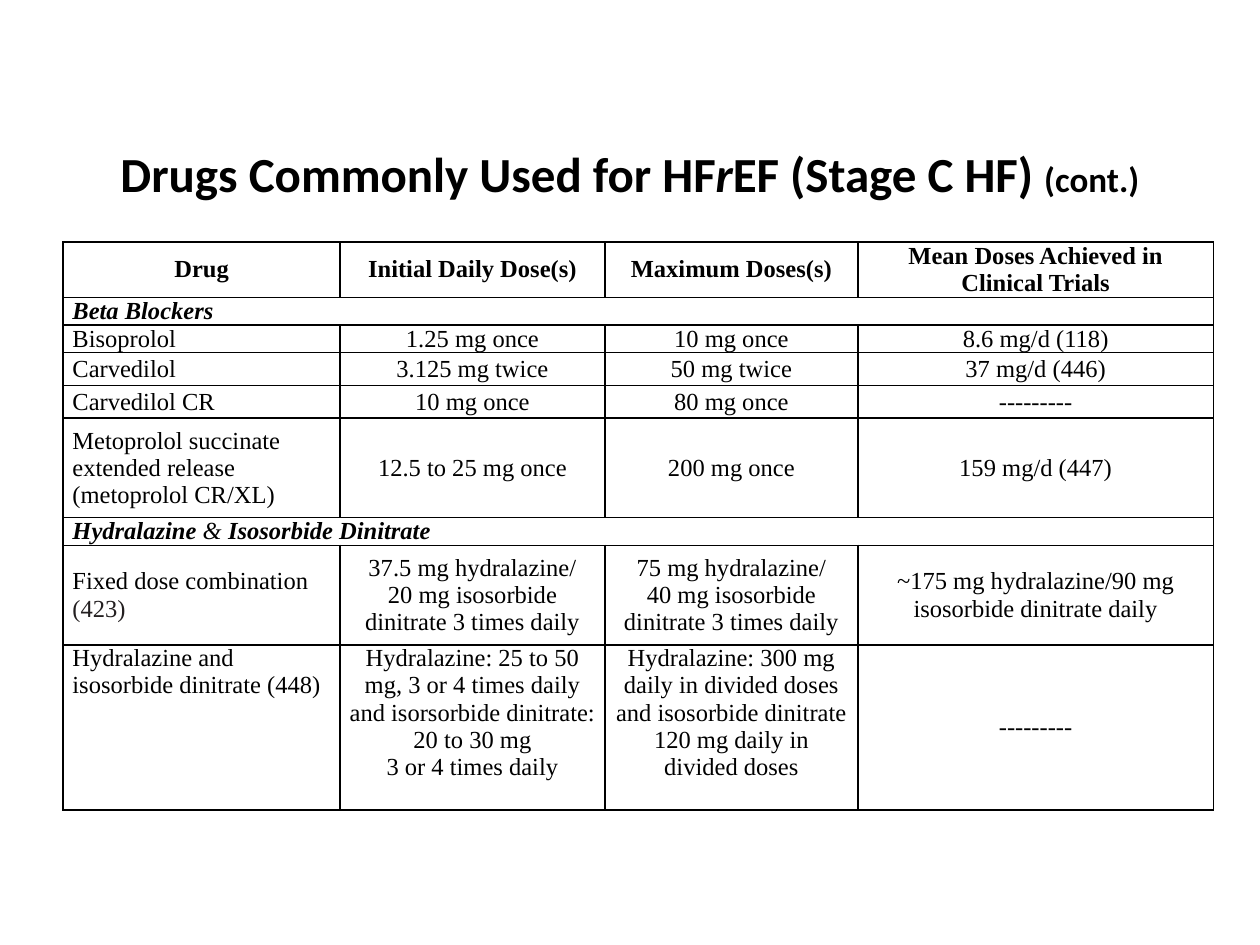
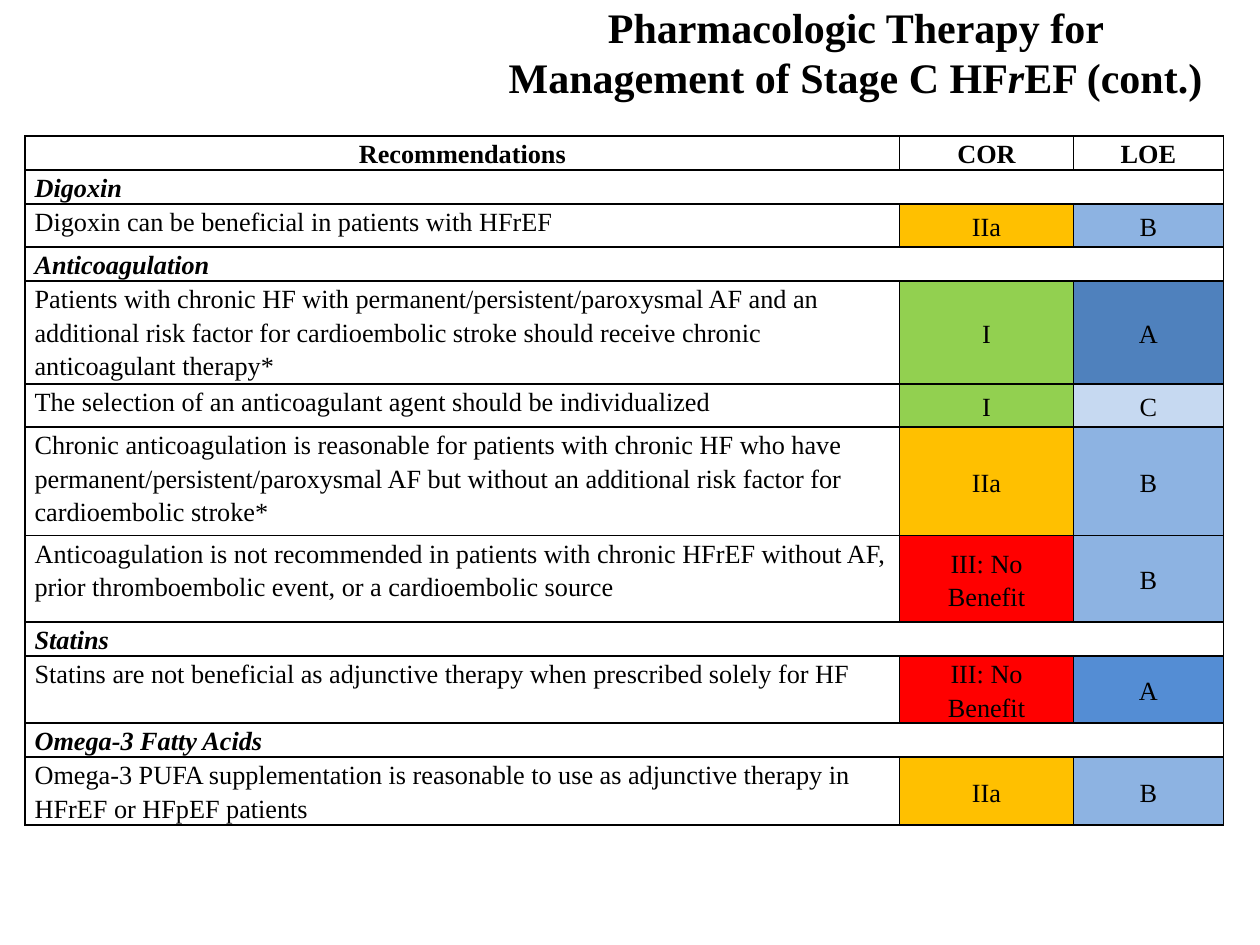
from lxml import etree
from pptx import Presentation
from pptx import util as u
from pptx.dml.color import RGBColor
from pptx.enum import text
from pptx.oxml.ns import qn

INK = "000000"
SERIF = "Times New Roman"
GOLD, GREEN, RED, SKY = "FFC000", "92D050", "FF0000", "8DB3E2"
LEFT, MID = text.PP_ALIGN.LEFT, text.PP_ALIGN.CENTER
TOP, CORE = text.MSO_ANCHOR.TOP, text.MSO_ANCHOR.MIDDLE


def hue(code):
    return RGBColor.from_string(code)


def write(frame, words, face, size, bold, slant, align, lead=1.0):
    odd = []
    for n, line in enumerate(words.split("\n")):
        para = frame.paragraphs[0] if n == 0 else frame.add_paragraph()
        para.alignment, para.line_spacing = align, lead
        for k, part in enumerate(line.split("_")):
            if not part:
                continue
            run = para.add_run()
            run.text = part
            font = run.font
            font.name, font.size = face, u.Pt(size)
            font.bold, font.italic = bold, slant
            font.color.rgb = hue(INK)
            if k % 2:
                odd.append(run)
    return odd


deck = Presentation()
deck.slide_width, deck.slide_height = u.Inches(10), u.Inches(7.5)

drugs = [
    ["Drug", "Initial Daily Dose(s)", "Maximum Doses(s)",
     "Mean Doses Achieved in Clinical Trials"],
    ["Beta Blockers"],
    ["Bisoprolol", "1.25 mg once", "10 mg once", "8.6 mg/d (118)"],
    ["Carvedilol", "3.125 mg twice", "50 mg twice", "37 mg/d (446)"],
    ["Carvedilol CR", "10 mg once", "80 mg once", "---------"],
    ["Metoprolol succinate extended release (metoprolol CR/XL)",
     "12.5 to 25 mg once", "200 mg once", "159 mg/d (447)"],
    ["Hydralazine_ & _Isosorbide Dinitrate"],
    ["Fixed dose combination _(423)_",
     "37.5 mg hydralazine/\n20 mg isosorbide dinitrate 3 times daily",
     "75 mg hydralazine/\n40 mg isosorbide dinitrate 3 times daily",
     "~175 mg hydralazine/90 mg isosorbide dinitrate daily"],
    ["Hydralazine and isosorbide dinitrate (448)",
     "Hydralazine: 25 to 50 mg, 3 or 4 times daily and isorsorbide dinitrate:\n"
     "20 to 30 mg\n3 or 4 times daily",
     "Hydralazine: 300 mg daily in divided doses and isosorbide dinitrate "
     "120 mg daily in divided doses", "---------"],
]
advice = [
    ["Recommendations", "COR", "LOE"],
    ["Digoxin"],
    ["Digoxin can be beneficial in patients with HFrEF", "IIa", "B"],
    ["Anticoagulation"],
    ["Patients with chronic HF with permanent/persistent/paroxysmal AF and an "
     "additional risk factor for cardioembolic stroke should receive chronic "
     "anticoagulant therapy*", "I", "A"],
    ["The selection of an anticoagulant agent should be individualized", "I", "C"],
    ["Chronic anticoagulation is reasonable for patients with chronic HF who have "
     "permanent/persistent/paroxysmal AF but without an additional risk factor for "
     "cardioembolic stroke*", "IIa", "B"],
    ["Anticoagulation is not recommended in patients with chronic HFrEF without AF, "
     "prior thromboembolic event, or a cardioembolic source", "III: No Benefit", "B"],
    ["Statins"],
    ["Statins are not beneficial as adjunctive therapy when prescribed solely for HF",
     "III: No Benefit", "A"],
    ["Omega-3 Fatty Acids"],
    ["Omega-3 PUFA supplementation is reasonable to use as adjunctive therapy in "
     "HFrEF or HFpEF patients", "IIa", "B"],
]
grades = {"IIa": GOLD, "I": GREEN, "III: No Benefit": RED,
          "A": "4F81BD", "B": SKY, "C": "C6D9F1"}

pages = [
    dict(title="Drugs Commonly Used for HF_r_EF (Stage C HF) _(cont.)_",
         face="Calibri", size=28, box=(0.5, 0.75, 9, 1.25), spot=(0.5, 1.92),
         cols=[2.2, 2.1, 2.01, 2.82],
         rows=[0.44, 0.22, 0.22, 0.26, 0.26, 0.79, 0.22, 0.79, 1.31],
         body=drugs, type=14, lead=u.Pt(15.5)),
    dict(title="Pharmacologic Therapy for Management of Stage C HF_r_EF (cont.)",
         face=SERIF, size=24, box=(3.83, -0.26, 5.92, 1.34), spot=(0.2, 1.08),
         cols=[6.94, 1.38, 1.19],
         rows=[0.27, 0.27, 0.34, 0.27, 0.82, 0.34, 0.86, 0.69, 0.27, 0.34, 0.27, 0.54],
         body=advice, type=15, lead=u.Pt(19.1)),
]

grids = []
for page in pages:
    slide = deck.slides.add_slide(deck.slide_layouts[6])
    frame = slide.shapes.add_textbox(*map(u.Inches, page["box"])).text_frame
    frame.word_wrap, frame.vertical_anchor = True, CORE
    odd = write(frame, page["title"], page["face"], page["size"], True, False, MID)
    odd[0].font.italic = True
    for run in odd[1:]:
        run.font.size = u.Pt(20)

    cols, rows, body = page["cols"], page["rows"], page["body"]
    area = (*page["spot"], sum(cols), sum(rows))
    grid = slide.shapes.add_table(len(rows), len(cols), *map(u.Inches, area)).table
    grids.append(grid)
    for col, wide in zip(grid.columns, cols):
        col.width = u.Inches(wide)
    for row, high in zip(grid.rows, rows):
        row.height = u.Inches(high)

    for r, line in enumerate(body):
        group = len(line) == 1
        for c in range(len(cols)):
            cell = grid.cell(r, c)
            cell.margin_left = cell.margin_right = u.Pt(5.4)
            cell.margin_top = cell.margin_bottom = 0
            for side in ("a:lnL", "a:lnR", "a:lnT", "a:lnB"):
                edge = etree.SubElement(cell._tc.get_or_add_tcPr(), qn(side), w="12700")
                fill = etree.SubElement(edge, qn("a:solidFill"))
                etree.SubElement(fill, qn("a:srgbClr"), val=INK)
            cell.fill.background()
            if c >= len(line):
                continue
            if body is advice:
                cell.vertical_anchor = CORE if r and c else TOP
                if r and c:
                    cell.fill.solid()
                    cell.fill.fore_color.rgb = hue(grades[line[c]])
            else:
                cell.vertical_anchor = TOP if r == len(rows) - 1 and c < 3 else CORE
            align = MID if r == 0 or c else LEFT
            odd = write(cell.text_frame, line[c], SERIF, page["type"],
                        r == 0 or group, group, align, page["lead"])
            for run in odd:
                if group:
                    run.font.bold = False
                else:
                    run.font.color.rgb = hue("231F20")
        if group:
            grid.cell(r, 0).merge(grid.cell(r, len(cols) - 1))

for r in (6, 7, 9):
    grids[1].cell(r, 0).text_frame.paragraphs[0].space_after = u.Pt(6)
grids[1].cell(9, 2).fill.fore_color.rgb = hue("548DD4")

deck.save("out.pptx")
